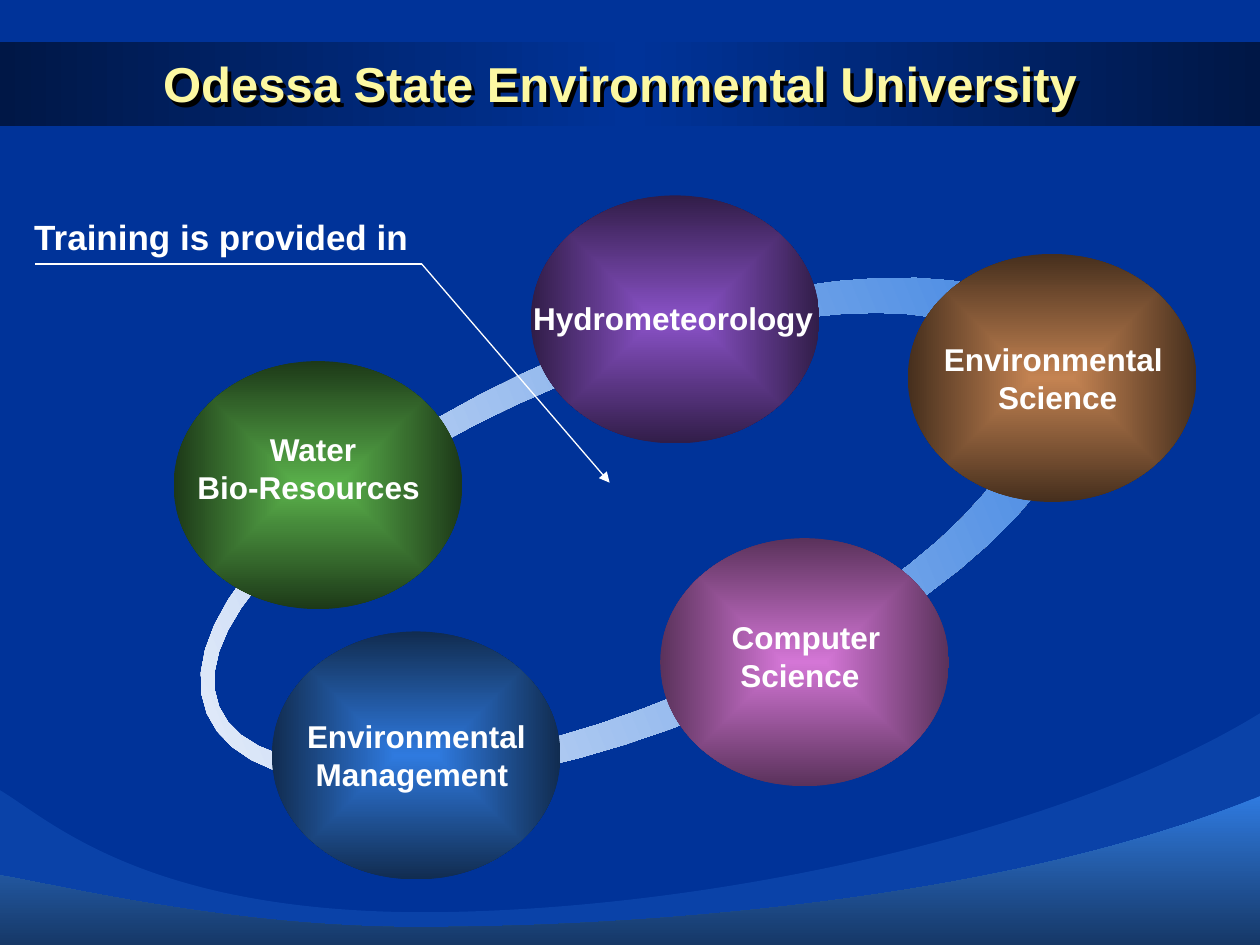
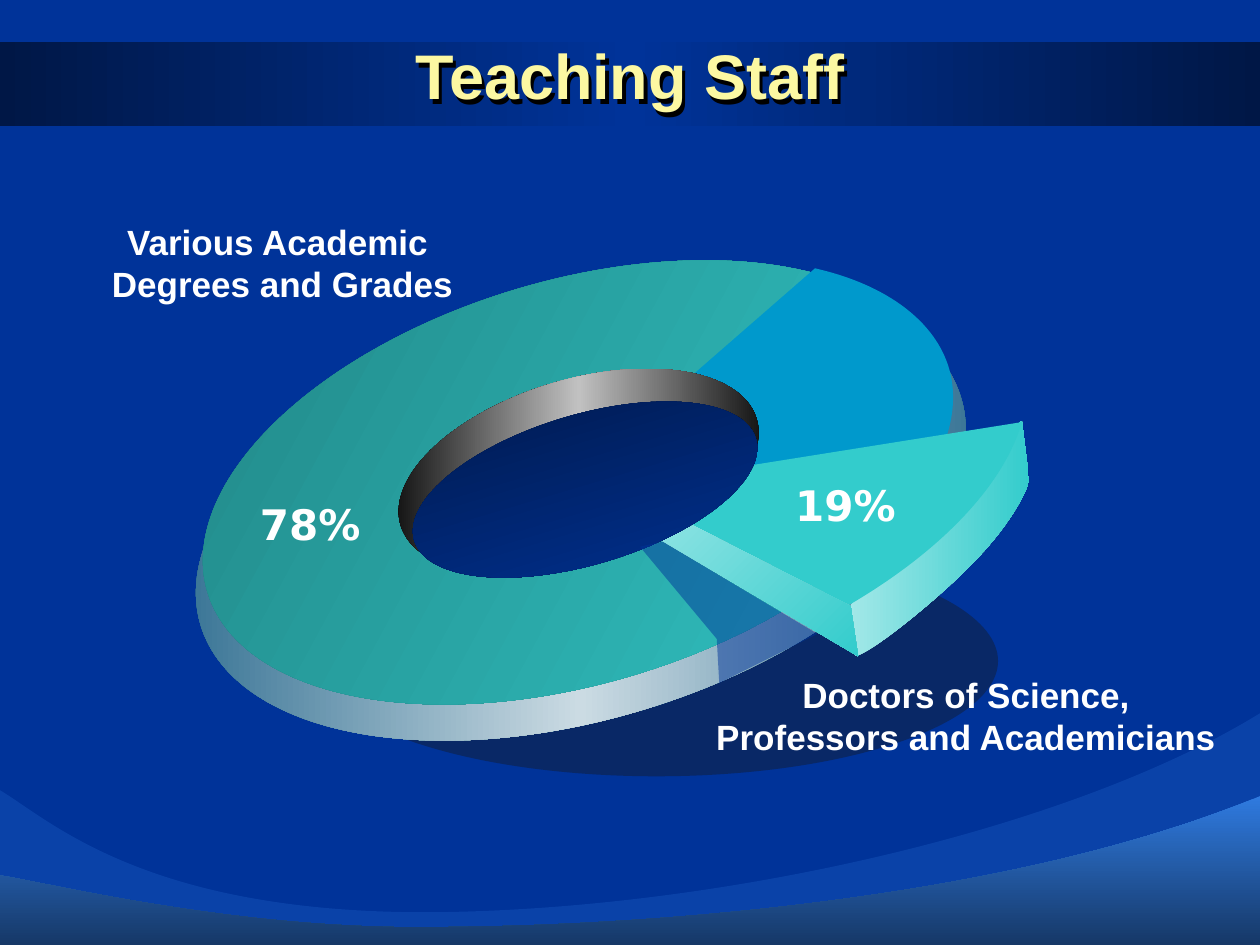
from dataclasses import dataclass
from math import cos, pi, sin

from lxml import etree
from pptx import Presentation
from pptx.dml.color import RGBColor
from pptx.enum.shapes import MSO_CONNECTOR, MSO_SHAPE
from pptx.enum.text import MSO_ANCHOR, MSO_AUTO_SIZE, PP_ALIGN
from pptx.oxml.ns import qn
from pptx.util import Cm, Pt

STRAIGHT = MSO_CONNECTOR.STRAIGHT
OVAL, RECT = MSO_SHAPE.OVAL, MSO_SHAPE.RECTANGLE
MIDDLE = MSO_ANCHOR.MIDDLE
GROW, FIXED = MSO_AUTO_SIZE.SHAPE_TO_FIT_TEXT, MSO_AUTO_SIZE.NONE
LEFT, CENTER = PP_ALIGN.LEFT, PP_ALIGN.CENTER

WHITE = RGBColor(0xFF, 0xFF, 0xFF)
BLACK = RGBColor(0x00, 0x00, 0x00)
CREAM = RGBColor(0xFC, 0xF8, 0xA2)
NAVY = RGBColor(0x00, 0x33, 0x99)
NIGHT = RGBColor(0x00, 0x17, 0x46)
SKY = RGBColor(0x2F, 0x7A, 0xDF)
DUSK = RGBColor(0x16, 0x38, 0x67)
DEEP = RGBColor(0x11, 0x2C, 0x50)
MIST = RGBColor(0xF4, 0xF6, 0xFC)
PURPLE = RGBColor(0x8A, 0x52, 0xC8)
GRAPE = RGBColor(0x31, 0x1D, 0x48)
GREEN = RGBColor(0x5A, 0xB1, 0x4B)
MOSS = RGBColor(0x1D, 0x39, 0x18)
PINK = RGBColor(0xD4, 0x76, 0xD6)
PLUM = RGBColor(0x5A, 0x32, 0x5B)
BROWN = RGBColor(0xC4, 0x83, 0x52)
BARK = RGBColor(0x46, 0x2F, 0x1D)
INK = RGBColor(0x0F, 0x21, 0x45)
STEEL = RGBColor(0x29, 0x69, 0x8D)
FROST = RGBColor(0xCB, 0xDB, 0xE3)
TEAL = RGBColor(0x20, 0x82, 0x82)
AQUA = RGBColor(0x33, 0xCC, 0xCC)
PALE = RGBColor(0xA2, 0xE8, 0xE8)
AZURE = RGBColor(0x00, 0x99, 0xCC)
SILVER = RGBColor(0xC1, 0xC1, 0xC1)

WIDE, HIGH = 25.4, 19.05
SANS, DEJA = "Arial", "DejaVu Sans"
RING_TILT, DISC_TILT = 337.4, 343.4
Point = tuple[float, float]
Part = list[Point]  # one point makes a line, three make a Bezier curve


@dataclass
class Flat:
    color: RGBColor
    alpha: int = 100


@dataclass
class Blend:
    colors: list[RGBColor]
    angle: float | None = 0  # None blends from the centre outwards
    turns: bool = True  # whether it rotates with its shape


@dataclass
class Box:
    left: float
    top: float
    width: float
    height: float


@dataclass
class Field:
    lines: list[str]
    left: float
    top: float
    colors: list[RGBColor]
    label: Box
    align: PP_ALIGN


@dataclass
class Disc:
    box: Box
    paint: Flat | Blend
    tilt: float = 0


# Fills
def paint_shape(shape, paint: Flat | Blend) -> None:
    shape.shadow.inherit = False
    shape.line.fill.background()
    props = shape._element.spPr
    if isinstance(paint, Flat):
        shape.fill.solid()
        shape.fill.fore_color.rgb = paint.color
        if paint.alpha < 100:
            tone = props.find(qn("a:solidFill"))[0]
            etree.SubElement(tone, qn("a:alpha"), val=str(paint.alpha * 1000))
        return
    shape.fill.background()
    grad = etree.Element(qn("a:gradFill"), rotWithShape=str(int(paint.turns)))
    group = etree.SubElement(grad, qn("a:gsLst"))
    for i, color in enumerate(paint.colors):
        pos = 100000 * i // (len(paint.colors) - 1)
        stop = etree.SubElement(group, qn("a:gs"), pos=str(pos))
        etree.SubElement(stop, qn("a:srgbClr"), val=str(color))
    if paint.angle is None:
        focus = etree.SubElement(grad, qn("a:path"), path="shape")
        etree.SubElement(focus, qn("a:fillToRect"), l="50000", t="50000",
                         r="50000", b="50000")
    else:
        etree.SubElement(grad, qn("a:lin"), ang=str(int(paint.angle * 60000)),
                         scaled="0")
    props.replace(props.find(qn("a:noFill")), grad)


# Shapes
def frame(box: Box) -> list[Cm]:
    return [Cm(v) for v in (box.left, box.top, box.width, box.height)]


def add_disc(slide, disc: Disc) -> None:
    shape = slide.shapes.add_shape(OVAL, *frame(disc.box))
    shape.rotation = disc.tilt
    paint_shape(shape, disc.paint)


def oval(x: float, y: float, wide: float, high: float) -> list[Part]:
    turns = [2 * pi * i / 60 for i in range(60)]
    return [[(x + wide * cos(a), y + high * sin(a))] for a in turns]


def add_form(slide, paint: Flat | Blend, *loops: list[Part], tilt: float = 0) -> None:
    """Draw closed loops, each begun by a part with its starting point."""
    parts = [part for loop in loops for part in loop]
    pen = slide.shapes.build_freeform(*(Cm(v) for v in parts[0][0]))
    for i, loop in enumerate(loops):
        spots = [(Cm(x), Cm(y)) for part in loop for x, y in part]
        if i:
            pen.move_to(*spots[0])
        pen.add_line_segments(spots[1:], close=True)
    shape = pen.convert_to_shape()
    # Turn each run of three points into a curve
    steps = [s for s in shape._element.iter(qn("a:moveTo"), qn("a:lnTo"))]
    for part in parts:
        run, steps = steps[:len(part)], steps[len(part):]
        if len(part) == 3:
            run[0].addprevious(curve := etree.Element(qn("a:cubicBezTo")))
            for step in run:
                curve.append(step[0])
                step.getparent().remove(step)
    shape.rotation = tilt
    paint_shape(shape, paint)


def add_line(slide, start: Point, end: Point, arrow: bool = False) -> None:
    line = slide.shapes.add_connector(STRAIGHT, *(Cm(v) for v in (*start, *end)))
    line.line.color.rgb = WHITE
    line.line.width = Pt(0.75)
    if arrow:
        etree.SubElement(line.line._get_or_add_ln(), qn("a:tailEnd"), type="triangle")
    etree.SubElement(line._element.spPr, qn("a:effectLst"))


def add_text(slide, lines: list[str], box: Box, size: int, align=CENTER,
             color: RGBColor = WHITE, face: str = SANS):
    shape = slide.shapes.add_textbox(*frame(box))
    body = shape.text_frame
    body.word_wrap = False
    body.auto_size = GROW
    body.text = "\n".join(lines)
    for para in body.paragraphs:
        para.alignment = align
        font = para.font
        font.name, font.size, font.bold = face, Pt(size), True
        font.color.rgb = color
    return shape


# Shared parts: background, band, waves and title
def add_base(deck, title: str, size: int, left: float, top: float):
    slide = deck.slides.add_slide(deck.slide_layouts[6])
    slide.background.fill.solid()
    slide.background.fill.fore_color.rgb = NAVY
    band = slide.shapes.add_shape(RECT, *frame(Box(0, 0.84, WIDE, 1.7)))
    paint_shape(band, Blend([NIGHT, NAVY, NIGHT]))
    add_form(slide, Flat(SKY, 22), [
        [(0, HIGH)], [(0, 15.93)],
        [(1.02, 16.54), (2.95, 18.42), (8.71, 18.39)],
        [(14.48, 18.34), (21.56, 16.74), (WIDE, 14.38)], [(WIDE, HIGH)]])
    add_form(slide, Blend([SKY, DUSK], 90), [
        [(0, HIGH)], [(0, 17.65)],
        [(0.91, 17.78), (4.72, 18.75), (8.79, 18.69)],
        [(12.85, 18.67), (20.24, 18.19), (WIDE, 16.05)], [(WIDE, HIGH)]])
    head = add_text(slide, [title], Box(left, top, 22.86, 1.57), size, color=CREAM)
    head.text_frame.auto_size = FIXED
    head.text_frame.word_wrap = True
    head.text_frame.vertical_anchor = MIDDLE
    cast = etree.SubElement(head._element.spPr, qn("a:effectLst"))
    drop = etree.SubElement(cast, qn("a:outerShdw"), dist=str(Cm(0.13)),
                            dir="3360000", algn="ctr", rotWithShape="0")
    etree.SubElement(drop, qn("a:srgbClr"), val=str(BLACK))
    return slide


FIELDS = [
    Field(["Hydrometeorology"], 10.7, 3.94, [PURPLE, GRAPE],
          Box(10.5, 5.91, 6.32, 1.02), LEFT),
    Field(["Water", "Bio-Resources "], 3.5, 7.28, [GREEN, MOSS],
          Box(3.73, 8.55, 5.16, 1.78), CENTER),
    Field(["Environmental", " Management"], 5.48, 12.73, [SKY, DEEP],
          Box(5.94, 14.33, 4.93, 1.78), LEFT),
    Field(["Computer", " Science"], 13.31, 10.85, [PINK, PLUM],
          Box(14.5, 12.34, 3.51, 1.78), LEFT),
    Field(["Environmental", " Science"], 18.3, 5.12, [BROWN, BARK],
          Box(18.77, 6.73, 4.93, 1.78), CENTER),
]


def add_fields(deck) -> None:
    slide = add_base(deck, "Odessa State Environmental University", 28, 1.07, 0.88)
    # Tilted ring, thicker on the right
    add_form(slide, Blend([MIST, SKY]), oval(12.95, 10.73, 9.51, 3.9),
             oval(12.5, 10.7, 8.78, 3.34), tilt=RING_TILT)
    for field in FIELDS:
        add_disc(slide, Disc(Box(field.left, field.top, 5.82, 5),
                             Blend(field.colors, None)))
    for field in FIELDS:
        add_text(slide, field.lines, field.label, 18, field.align)
    # Callout
    bend = (8.5, 5.32)
    add_line(slide, bend, (12.29, 9.73), arrow=True)
    add_line(slide, bend, (0.7, 5.32))
    add_text(slide, ["Training is provided in"], Box(0.44, 4.22, 8.26, 1.09), 20, LEFT)


def add_staff(deck) -> None:
    slide = add_base(deck, "Teaching Staff", 36, 1.27, 0.71)
    # Disc with its shadow and side
    for disc in (
        Disc(Box(6.35, 11, 13.77, 4.65), Flat(INK, 60)),
        Disc(Box(3.71, 6.12, 16, 8.38), Blend([STEEL, FROST, STEEL], turns=False),
             DISC_TILT),
        Disc(Box(3.86, 5.66, 15.44, 8.13), Blend([TEAL, AQUA], 45), DISC_TILT),
    ):
        add_disc(slide, disc)
    add_form(slide, Flat(AZURE), [
        [(16.43, 5.41)], [(17.88, 5.74), (18.85, 6.48), (19.13, 7.42)],
        [(19.28, 7.92), (19.23, 8.51), (18.97, 9.09)], [(11.53, 9.68)]])
    add_disc(slide, Disc(Box(7.92, 7.65, 7.49, 3.73),
                         Blend([BLACK, SILVER, BLACK], turns=False), DISC_TILT))
    # Pulled-out slice: rim, top and cut face
    add_form(slide, Blend([PALE, AQUA]), [
        [(17.15, 12.19)], [(20.6, 8.48)], [(20.75, 9.7)],
        [(20.57, 10.21), (20.12, 10.85), (19.53, 11.43)],
        [(18.97, 12.01), (17.65, 13.11), (17.25, 13.23)],
        [(17.17, 12.9), (17.15, 12.19), (17.15, 12.19)]])
    add_form(slide, Flat(AQUA), [
        [(20.6, 8.51)], [(20.24, 9.78), (18.95, 11.15), (16.99, 12.27)],
        [(12.32, 9.83)]])
    add_form(slide, Blend([PALE, AQUA], 45),
             [[(17.15, 12.22)], [(17.3, 13.23)], [(12.73, 10.54)], [(12.42, 9.8)]])
    # Hole and the gap left by the slice
    add_disc(slide, Disc(Box(8.2, 8.36, 7.19, 3.02), Blend([NIGHT, NAVY], 90), DISC_TILT))
    add_form(slide, Flat(NAVY, 49), [[(12.9, 11.02)], [(14.45, 12.88)], [(14.5, 13.77)],
                                     [(16.48, 12.78)], [(13.36, 10.92)]])
    # Labels
    for share, left, top in (("78%", 4.86, 9.92), ("19%", 15.65, 9.55)):
        add_text(slide, [share], Box(left, top, 2.79, 1.27), 24, face=DEJA)
    add_text(slide, ["Various Academic ", "Degrees and Grades "],
             Box(1.91, 4.32, 7.57, 1.96), 20)
    add_text(slide, ["Doctors of Science,", "Professors and Academicians"],
             Box(14, 13.46, 10.95, 1.96), 20)


def main() -> None:
    deck = Presentation()
    deck.slide_width, deck.slide_height = Cm(WIDE), Cm(HIGH)
    add_fields(deck)
    add_staff(deck)
    deck.save("out.pptx")


if __name__ == "__main__":
    main()
